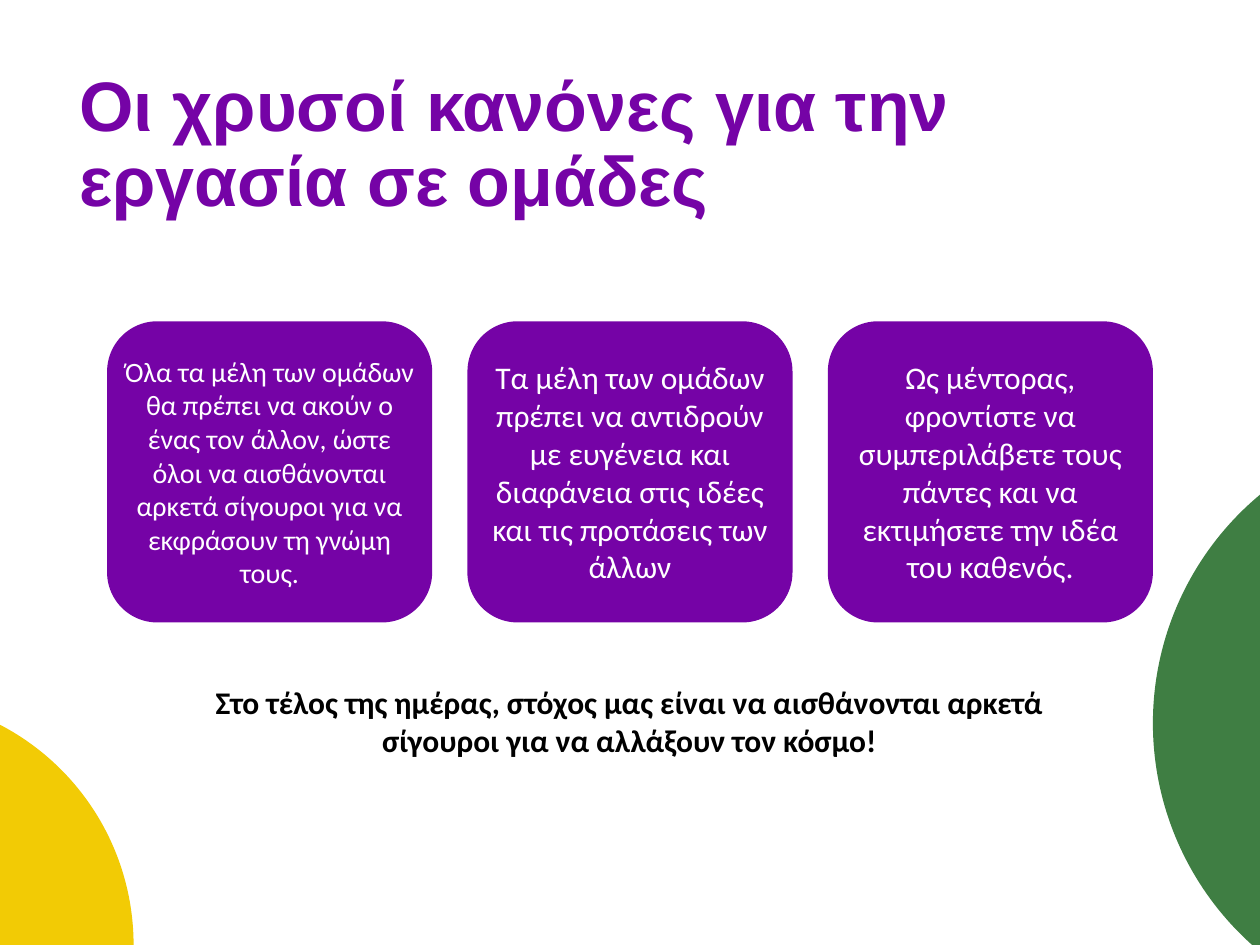
from dataclasses import dataclass

from pptx import Presentation
from pptx.dml.color import RGBColor as Color
from pptx.enum.shapes import MSO_SHAPE as Preset
from pptx.enum.text import MSO_ANCHOR as Anchor, MSO_AUTO_SIZE as AutoSize, PP_ALIGN as Align
from pptx.util import Inches, Pt


@dataclass(frozen=True)
class Theme:
    """Colours, fonts and type sizes of the slide."""
    purple: Color = Color(0x75, 0x03, 0xA6)
    green: Color = Color(0x3F, 0x7E, 0x43)
    yellow: Color = Color(0xF2, 0xCB, 0x05)
    white: Color = Color(0xFF, 0xFF, 0xFF)
    black: Color = Color(0, 0, 0)
    heading_font: str = "Arial"
    body_font: str = "Calibri"
    title_size: int = 40
    body_size: int = 18
    small_size: int = 16


THEME = Theme()
WIDTH, HEIGHT = 10, 7.5
CARD_GAP = 0.28
TITLE = "Οι χρυσοί κανόνες για την εργασία σε ομάδες"
RULES = [
    ("Όλα τα μέλη των ομάδων θα πρέπει να ακούν ο ένας τον άλλον, ώστε όλοι να "
     "αισθάνονται αρκετά σίγουροι για να εκφράσουν τη γνώμη τους.", THEME.small_size),
    ("Τα μέλη των ομάδων πρέπει να αντιδρούν με ευγένεια και διαφάνεια στις ιδέες "
     "και τις προτάσεις των άλλων", THEME.body_size),
    ("Ως μέντορας, φροντίστε να συμπεριλάβετε τους πάντες και να εκτιμήσετε την "
     "ιδέα του καθενός.", THEME.body_size),
]
CLOSING = ("Στο τέλος της ημέρας, στόχος μας είναι να αισθάνονται αρκετά σίγουροι "
           "για να αλλάξουν τον κόσμο!")


def write(frame, text, size, color, font=THEME.body_font, bold=False, align=Align.CENTER):
    """Write one formatted run into the frame and return its paragraph."""
    frame.word_wrap = True
    paragraph = frame.paragraphs[0]
    paragraph.alignment = align
    run = paragraph.add_run()
    run.text = text
    run.font.name = font
    run.font.size = Pt(size)
    run.font.bold = bold
    run.font.color.rgb = color
    return paragraph


def add_filled(slide, preset, box, color):
    """Add a flat preset shape without outline or shadow."""
    shape = slide.shapes.add_shape(preset, *map(Inches, box))
    shape.shadow.inherit = False
    shape.fill.solid()
    shape.fill.fore_color.rgb = color
    shape.line.fill.background()
    return shape


def add_corner_circles(slide):
    """Place the two circles that run over the slide's edges."""
    for left, top, diameter, color in ((9.15, 3.38, 4.72, THEME.green),
                                       (-2.88, 5.53, 3.94, THEME.yellow)):
        add_filled(slide, Preset.OVAL, (left, top, diameter, diameter), color)


def add_title(slide, box):
    """Fill and format the title placeholder."""
    title = slide.shapes.title
    title.left, title.top, title.width, title.height = map(Inches, box)
    frame = title.text_frame
    frame.auto_size = AutoSize.NONE
    frame.vertical_anchor = Anchor.TOP
    paragraph = write(frame, TITLE, THEME.title_size, THEME.purple,
                      THEME.heading_font, True, Align.LEFT)
    paragraph.line_spacing = 0.9


def add_rule_cards(slide, box):
    """Divide the box into equal columns with one rule card in each."""
    left, top, width, height = box
    card_width = (width - CARD_GAP * (len(RULES) - 1)) / len(RULES)
    for column, (text, size) in enumerate(RULES):
        card_left = left + column * (card_width + CARD_GAP)
        card = add_filled(slide, Preset.ROUNDED_RECTANGLE,
                          (card_left, top, card_width, height), THEME.purple)
        frame = card.text_frame
        frame.margin_left = frame.margin_right = 0
        frame.vertical_anchor = Anchor.MIDDLE
        write(frame, text, size, THEME.white)


def add_closing(slide, box):
    """Add the closing statement below the cards."""
    frame = slide.shapes.add_textbox(*map(Inches, box)).text_frame
    frame.auto_size = AutoSize.SHAPE_TO_FIT_TEXT
    write(frame, CLOSING, THEME.body_size, THEME.black, bold=True)


def main():
    """Build the slide and save the presentation."""
    presentation = Presentation()
    presentation.slide_width, presentation.slide_height = Inches(WIDTH), Inches(HEIGHT)
    slide = presentation.slides.add_slide(presentation.slide_layouts[5])
    add_corner_circles(slide)
    add_title(slide, (0.53, 0.51, 7.11, 1.45))
    add_closing(slide, (1.52, 5.37, 6.95, 0.71))
    add_rule_cards(slide, (0.85, 2.55, 8.3, 2.39))
    presentation.save("out.pptx")


if __name__ == "__main__":
    main()
